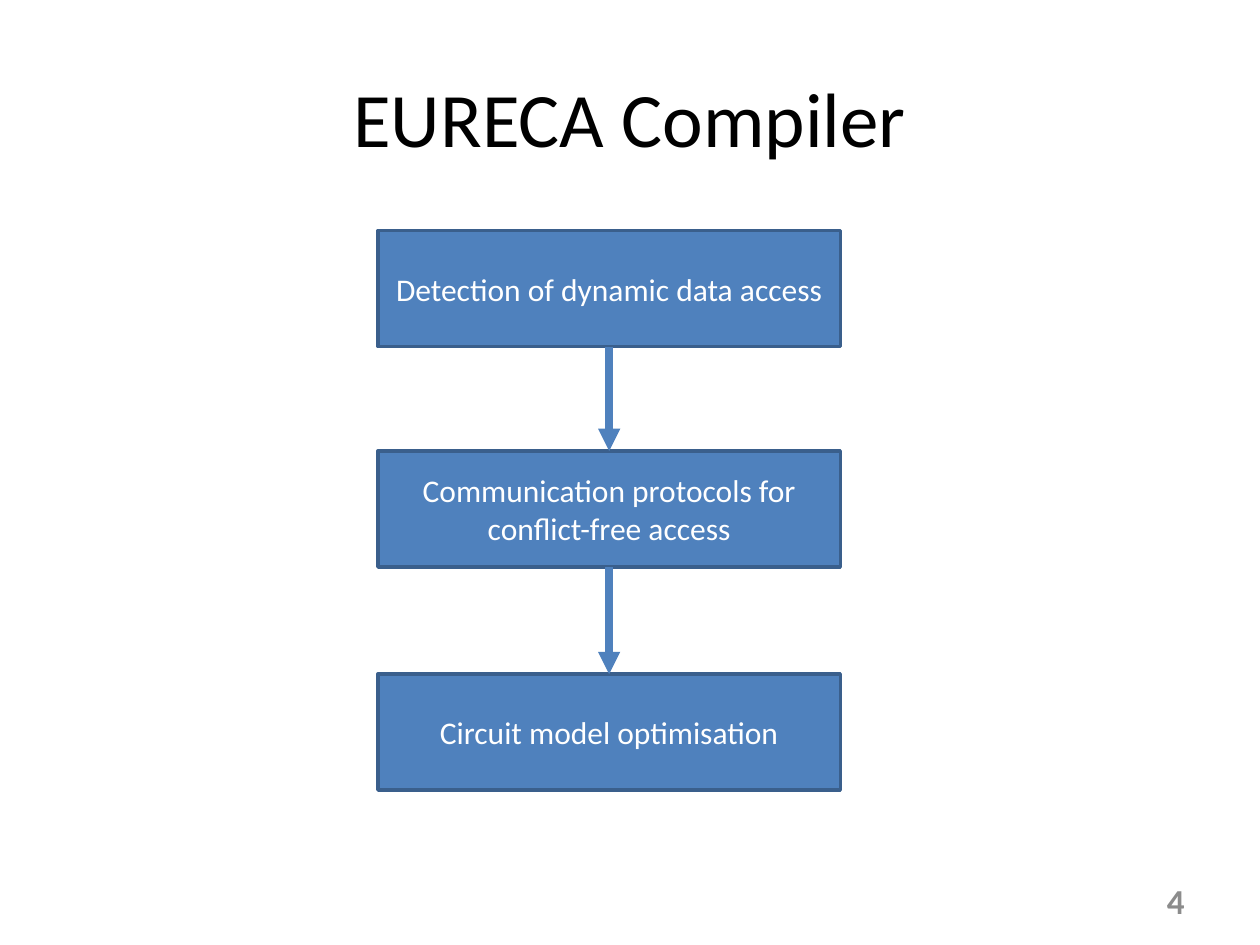
"""Build the EURECA Compiler slide: three stages joined by arrows."""
from dataclasses import dataclass

from lxml import etree
from pptx import Presentation
from pptx.dml.color import RGBColor
from pptx.enum import shapes, text
from pptx.oxml import ns
from pptx.util import Inches, Pt


@dataclass(frozen=True)
class Theme:
    font: str = "Calibri"
    black: str = "000000"
    white: str = "FFFFFF"
    grey: str = "8C8C8C"
    blue: str = "4F81BD"
    edge: str = "3A5F8C"
    title_size: int = 44
    stage_size: int = 18
    number_size: int = 20


theme = Theme()


def write(sp, words, size, color, align, bold=False):
    tf = sp.text_frame
    tf.word_wrap = True
    tf.vertical_anchor = text.MSO_ANCHOR.MIDDLE
    p = tf.paragraphs[0]
    p.alignment = align
    r = p.add_run()
    r.text = words
    r.font.name = theme.font
    r.font.size = Pt(size)
    r.font.bold = bold
    r.font.color.rgb = RGBColor.from_string(color)


prs = Presentation()
prs.slide_width, prs.slide_height = Inches(10), Inches(7.5)
s = prs.slides.add_slide(prs.slide_layouts[5])

title = s.shapes.title
title.left, title.top = Inches(0.5), Inches(0.3)
title.width, title.height = Inches(9), Inches(1.25)
write(title, "EURECA Compiler", theme.title_size, theme.black, text.PP_ALIGN.CENTER)

number = s.shapes.add_textbox(Inches(7.17), Inches(6.95), Inches(2.33), Inches(0.4))
write(number, "4", theme.number_size, theme.grey, text.PP_ALIGN.RIGHT, bold=True)

stages = [
    (1.83, "Detection of dynamic data access"),
    (3.58, "Communication protocols for conflict-free access"),
    (5.35, "Circuit model optimisation"),
]
boxes = []
for top, words in stages:
    sp = s.shapes.add_shape(
        shapes.MSO_SHAPE.RECTANGLE, Inches(3), Inches(top), Inches(3.67), Inches(0.92)
    )
    sp.shadow.inherit = False
    sp.fill.solid()
    sp.fill.fore_color.rgb = RGBColor.from_string(theme.blue)
    sp.line.color.rgb = RGBColor.from_string(theme.edge)
    sp.line.width = Pt(2)
    write(sp, words, theme.stage_size, theme.white, text.PP_ALIGN.CENTER)
    boxes.append(sp)

for upper, lower in zip(boxes, boxes[1:]):
    arrow = s.shapes.add_connector(shapes.MSO_CONNECTOR.STRAIGHT, 0, 0, 0, 0)
    arrow.begin_connect(upper, 2)
    arrow.end_connect(lower, 0)
    arrow.line.color.rgb = RGBColor.from_string(theme.blue)
    arrow.line.width = Pt(4.25)
    etree.SubElement(arrow.line._get_or_add_ln(), ns.qn("a:tailEnd"), type="triangle")
    etree.SubElement(arrow._element.spPr, ns.qn("a:effectLst"))

prs.save("out.pptx")
